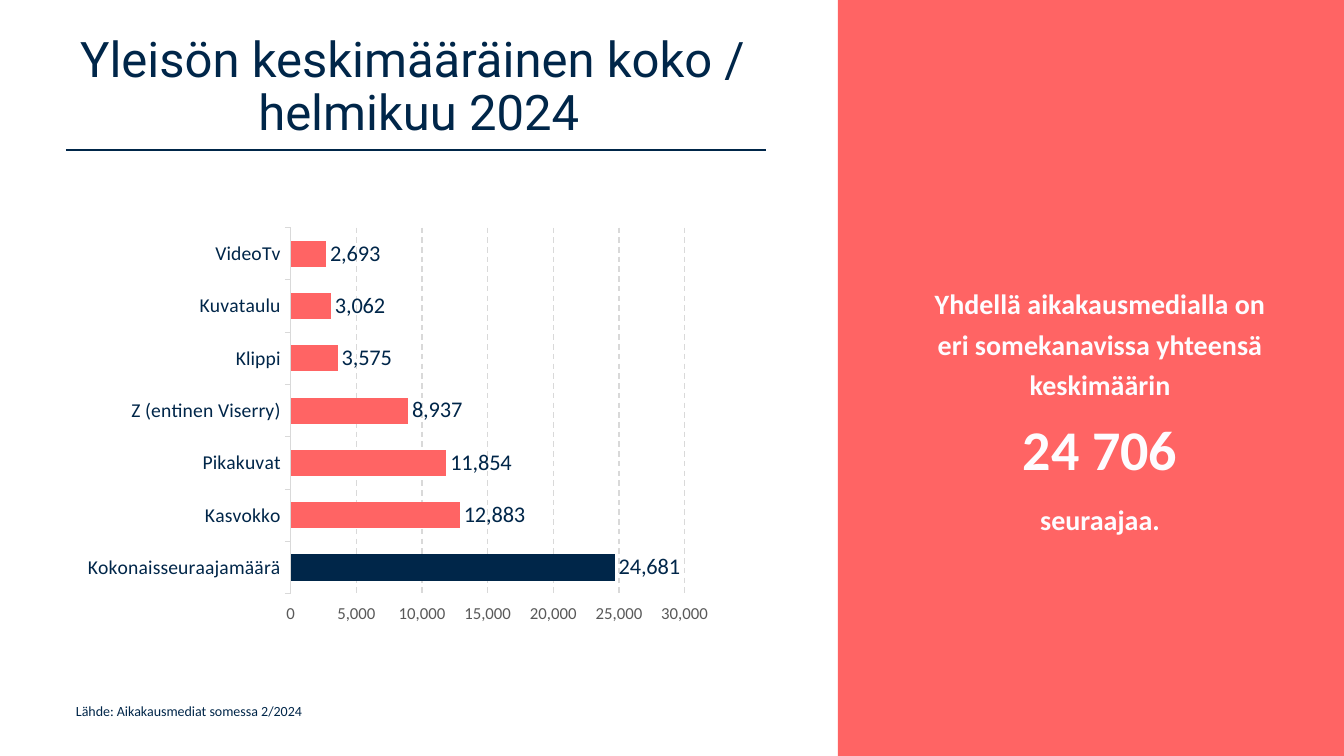
from lxml import etree
from pptx import Presentation
from pptx.chart.data import CategoryChartData
from pptx.dml.color import RGBColor
from pptx.enum.chart import XL_CHART_TYPE as ChartType, XL_LABEL_POSITION as LabelPosition, XL_TICK_MARK as TickMark
from pptx.enum.dml import MSO_LINE as LineStyle
from pptx.enum.shapes import MSO_CONNECTOR as Connector, MSO_SHAPE as Shape
from pptx.enum.text import MSO_ANCHOR as Anchor, PP_ALIGN as Align
from pptx.oxml import parse_xml
from pptx.oxml.ns import nsdecls, qn
from pptx.util import Emu, Pt

NAVY = RGBColor(0x00, 0x26, 0x49)
CORAL = RGBColor(0xFF, 0x64, 0x64)
PALE = RGBColor(0xFE, 0xFC, 0xFF)
GRID = RGBColor(0xD9, 0xD9, 0xD9)
GREY = RGBColor(0x59, 0x59, 0x59)
BLACK = RGBColor(0, 0, 0)

BODY_FONT = "Calibri"
TITLE_FONT = "Roboto"

SLIDE = (1344, 756)
PANEL = (838, 0, 506, 756)
RULE = (66, 150, 766, 150)
TITLE_BOX = (0, 25, 838, 126)
MESSAGE_BOX = (911, 151, 378, 514)
SOURCE_BOX = (66, 698, 663, 44)
CHART_BOX = (0, 190, 838, 437)
PLOT = {"x": 0.347, "y": 0.086, "w": 0.47, "h": 0.838}

TITLE = [[("Yleisön keskimääräinen koko / ", 35), ("helmikuu 2024", 35)]]
MESSAGE = [
    [("Yhdellä aikakausmedialla on eri somekanavissa yhteensä keskimäärin", 20), ("24 706", 40)],
    [("seuraajaa.", 20)],
]
SOURCE = [[("Lähde: Aikakausmediat somessa 2/2024", 10)]]

AUDIENCE = {
    "Kokonaisseuraajamäärä": 24681,
    "Kasvokko": 12883,
    "Pikakuvat": 11854,
    "Z (entinen Viserry)": 8937,
    "Klippi": 3575,
    "Kuvataulu": 3062,
    "VideoTv": 2693,
}


def px(*lengths):
    return [Emu(round(length * 914400 / 100.8)) for length in lengths]


def style_font(font, size, color, name=BODY_FONT, bold=False):
    font.size = Pt(size)
    font.name = name
    font.bold = bold
    font.color.rgb = color


def add_text(page, place, paragraphs, color, name=BODY_FONT, bold=False,
             align=Align.LEFT, anchor=Anchor.TOP, spacing=1.0):
    frame = page.shapes.add_textbox(*px(*place)).text_frame
    frame.word_wrap = True
    frame.vertical_anchor = anchor
    for index, lines in enumerate(paragraphs):
        para = frame.add_paragraph() if index else frame.paragraphs[0]
        para.alignment = align
        para.line_spacing = spacing
        if index:
            para.space_before = Pt(10)
        for number, (text, size) in enumerate(lines):
            if number:
                para.add_line_break()
            span = para.add_run()
            span.text = text
            style_font(span.font, size, color, name, bold)


def add_panel(page):
    panel = page.shapes.add_shape(Shape.RECTANGLE, *px(*PANEL))
    panel.shadow.inherit = False
    panel.fill.solid()
    panel.fill.fore_color.rgb = CORAL
    panel.line.fill.background()


def add_rule(page):
    rule = page.shapes.add_connector(Connector.STRAIGHT, *px(*RULE))
    rule.line.color.rgb = NAVY
    rule.line.width = Pt(1)
    etree.SubElement(rule._element.spPr, qn("a:effectLst"))


def place_plot(chart):
    edges = "".join(f'<c:{key}Mode val="edge"/>' for key in "xy")
    sizes = "".join(f'<c:{key} val="{value}"/>' for key, value in PLOT.items())
    layout = parse_xml(
        f'<c:layout {nsdecls("c")}><c:manualLayout><c:layoutTarget val="inner"/>'
        f"{edges}{sizes}</c:manualLayout></c:layout>"
    )
    plot_area = chart._chartSpace.chart.plotArea
    for old in plot_area.findall(qn("c:layout")):
        plot_area.remove(old)
    plot_area.insert(0, layout)


def add_audience_chart(page):
    data = CategoryChartData(number_format="#,##0")
    data.categories = list(AUDIENCE)
    data.add_series("Series 1", list(AUDIENCE.values()))
    chart = page.shapes.add_chart(ChartType.BAR_CLUSTERED, *px(*CHART_BOX), data).chart
    chart.has_title = False
    chart.has_legend = False
    style_font(chart.font, 10, BLACK)
    place_plot(chart)

    channels = chart.category_axis
    channels.major_tick_mark = TickMark.OUTSIDE
    channels.format.line.color.rgb = GRID
    channels.format.line.width = Pt(0.75)
    style_font(channels.tick_labels.font, 14, NAVY)

    followers = chart.value_axis
    followers.minimum_scale = 0
    followers.maximum_scale = 30000
    followers.major_unit = 5000
    followers.major_tick_mark = TickMark.OUTSIDE
    followers.format.line.fill.background()
    followers.tick_labels.number_format = "#,##0"
    followers.tick_labels.number_format_is_linked = False
    style_font(followers.tick_labels.font, 12, GREY)
    grid = followers.major_gridlines.format.line
    grid.color.rgb = GRID
    grid.width = Pt(1)
    grid.dash_style = LineStyle.DASH

    plot = chart.plots[0]
    plot.gap_width = 100
    plot.vary_by_categories = False
    bars = plot.series[0]
    bars.invert_if_negative = False
    bars.format.fill.solid()
    bars.format.fill.fore_color.rgb = CORAL
    total = bars.points[0].format.fill
    total.solid()
    total.fore_color.rgb = NAVY

    labels = bars.data_labels
    labels.show_value = True
    labels.position = LabelPosition.OUTSIDE_END
    labels.number_format = "#,##0"
    labels.number_format_is_linked = False
    style_font(labels.font, 16, NAVY)


def main():
    deck = Presentation()
    deck.slide_width, deck.slide_height = px(*SLIDE)
    page = deck.slides.add_slide(deck.slide_layouts[6])
    add_panel(page)
    add_rule(page)
    add_text(page, SOURCE_BOX, SOURCE, NAVY)
    add_text(page, TITLE_BOX, TITLE, NAVY, TITLE_FONT,
             align=Align.CENTER, anchor=Anchor.MIDDLE, spacing=0.9)
    add_text(page, MESSAGE_BOX, MESSAGE, PALE, bold=True,
             align=Align.CENTER, anchor=Anchor.MIDDLE, spacing=1.2)
    add_audience_chart(page)
    deck.save("out.pptx")


if __name__ == "__main__":
    main()
